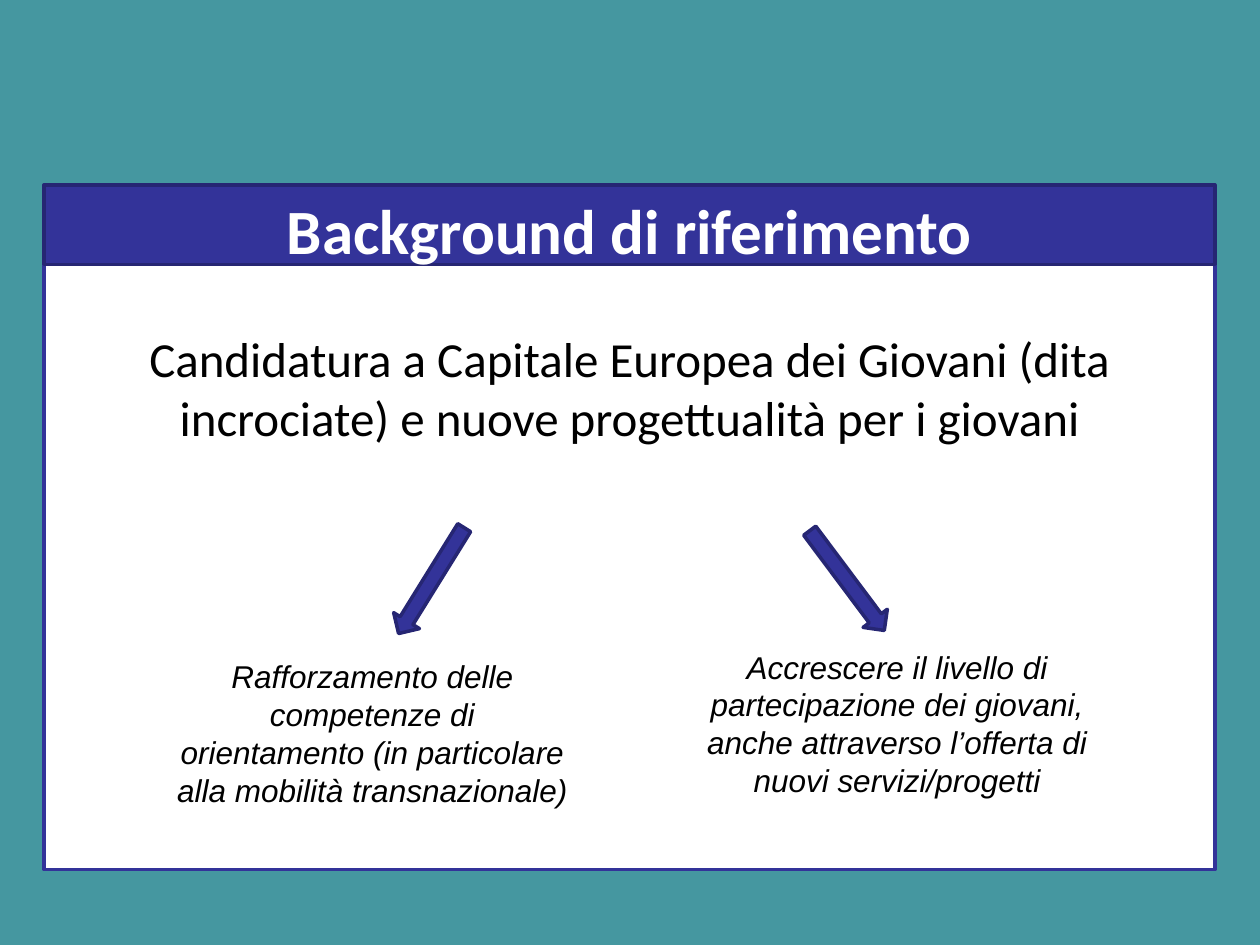
import pptx
import pptx.dml.color
import pptx.enum.shapes
import pptx.enum.text
import pptx.util

Cm = pptx.util.Cm
Pt = pptx.util.Pt
RGBColor = pptx.dml.color.RGBColor
Shape = pptx.enum.shapes.MSO_SHAPE

TEAL = RGBColor(0x45, 0x97, 0xA0)
INDIGO = RGBColor(0x33, 0x33, 0x99)
DARK_INDIGO = RGBColor(0x26, 0x26, 0x73)
WHITE = RGBColor(0xFF, 0xFF, 0xFF)
BLACK = RGBColor(0, 0, 0)


class SlideBuilder:
    heading_font = "Calibri"
    body_font = "Arial"
    line_width = Pt(2)

    def __init__(self, slide):
        self.slide = slide
        slide.background.fill.solid()
        slide.background.fill.fore_color.rgb = TEAL

    def set_text(self, shape, text, font_name, size, color, bold=False, italic=False):
        frame = shape.text_frame
        frame.text = text
        frame.word_wrap = True
        frame.auto_size = pptx.enum.text.MSO_AUTO_SIZE.NONE
        frame.vertical_anchor = pptx.enum.text.MSO_ANCHOR.TOP
        paragraph = frame.paragraphs[0]
        paragraph.alignment = pptx.enum.text.PP_ALIGN.CENTER
        font = paragraph.runs[0].font
        font.name, font.size, font.color.rgb = font_name, Pt(size), color
        font.bold, font.italic = bold, italic

    def title(self, text, left, top, width, height):
        title = self.slide.shapes.title
        title.left, title.top = Cm(left), Cm(top)
        title.width, title.height = Cm(width), Cm(height)
        self.set_text(title, text, self.heading_font, 36, WHITE, bold=True)
        # Bring the title in front of its bar
        title.element.getparent().append(title.element)

    def shape(self, kind, left, top, width, height, fill, line, rotation=0):
        shape = self.slide.shapes.add_shape(
            kind, Cm(left), Cm(top), Cm(width), Cm(height))
        shape.shadow.inherit = False
        shape.fill.solid()
        shape.fill.fore_color.rgb = fill
        shape.line.color.rgb = line
        shape.line.width = self.line_width
        shape.rotation = rotation
        return shape

    def goal(self, text, left, top, width, height):
        box = self.slide.shapes.add_textbox(
            Cm(left), Cm(top), Cm(width), Cm(height))
        self.set_text(box, text, self.body_font, 18, BLACK, italic=True)


def main():
    presentation = pptx.Presentation()
    presentation.slide_width, presentation.slide_height = Cm(25.4), Cm(19.05)
    builder = SlideBuilder(
        presentation.slides.add_slide(presentation.slide_layouts[5]))
    left, width, bar_top = 0.89, 23.6, 3.73

    # White panel with the main statement
    panel = builder.shape(Shape.RECTANGLE, left, 5.13, width, 12.4, WHITE, INDIGO)
    builder.set_text(
        panel,
        "Candidatura a Capitale Europea dei Giovani (dita incrociate) "
        "e nuove progettualità per i giovani",
        builder.heading_font, 28, BLACK)
    panel.text_frame.margin_top = Cm(1.5)

    # Title bar
    builder.shape(Shape.RECTANGLE, left, bar_top, width, 1.6, INDIGO, DARK_INDIGO)
    builder.title("Background di riferimento", left, bar_top, width, 1.8)

    # The two goals
    builder.goal(
        "Rafforzamento delle competenze di orientamento "
        "(in particolare alla mobilità transnazionale)",
        3.3, 13.13, 8.41, 3.33)
    builder.goal(
        "Accrescere il livello di partecipazione dei giovani, "
        "anche attraverso l’offerta di nuovi servizi/progetti",
        13.69, 12.93, 8.79, 4.88)

    # Arrows from the statement to the goals
    for arrow_left, rotation in ((15.82, 53.2), (7.44, 121.8)):
        builder.shape(Shape.RIGHT_ARROW, arrow_left, 11.4, 2.51, 0.61,
                      INDIGO, DARK_INDIGO, rotation)

    presentation.save("out.pptx")


if __name__ == "__main__":
    main()
